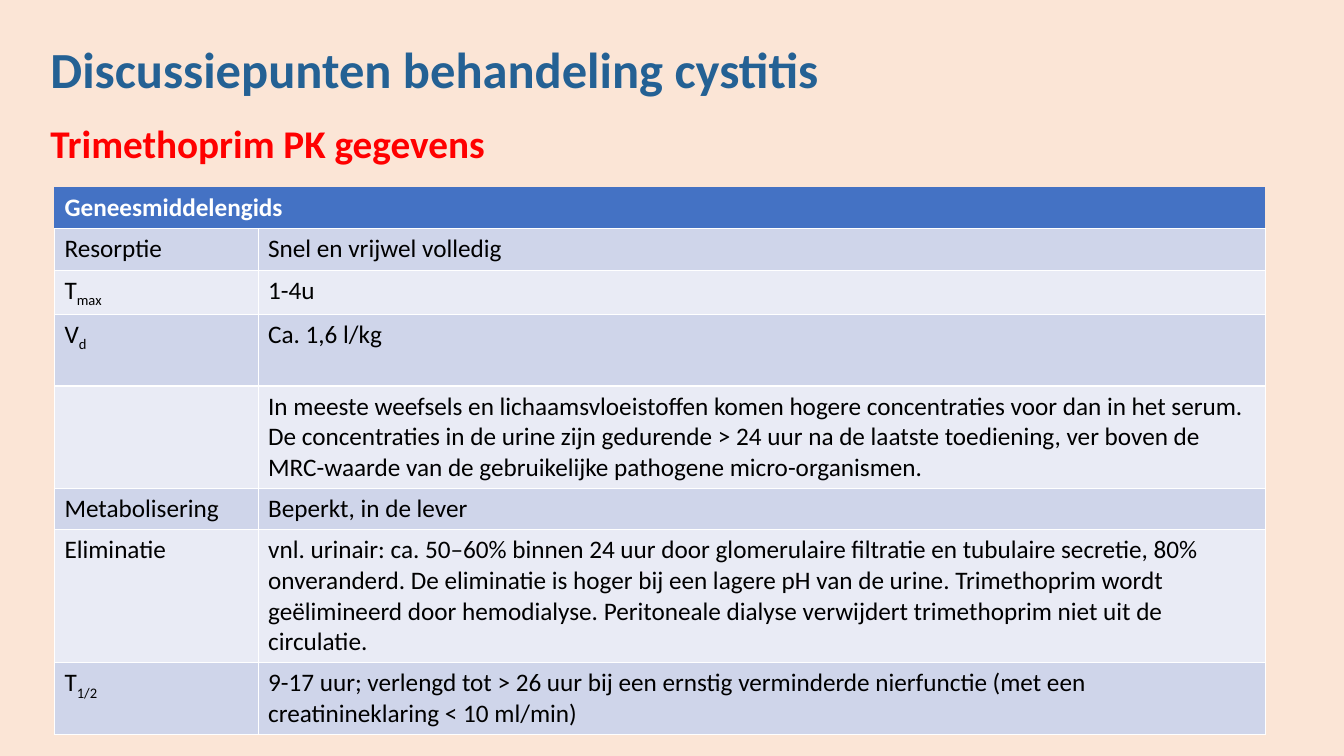
from lxml.etree import SubElement
from pptx import Presentation
from pptx.dml.color import RGBColor
from pptx.enum.text import MSO_ANCHOR, PP_ALIGN
from pptx.oxml.ns import qn
from pptx.util import Inches, Pt

PEACH = RGBColor(0xFB, 0xE5, 0xD6)
TITLE_BLUE = RGBColor(0x24, 0x61, 0x94)
RED = RGBColor(0xFF, 0x00, 0x00)
HEADER_BLUE = RGBColor(0x44, 0x72, 0xC4)
BANDS = (RGBColor(0xCF, 0xD5, 0xEA), RGBColor(0xE9, 0xEB, 0xF5))
WHITE = RGBColor(0xFF, 0xFF, 0xFF)
BLACK = RGBColor(0x00, 0x00, 0x00)

COLUMN_WIDTHS = (2.02, 9.99)
HEADER_HEIGHT = 0.41
TABLE_HEADER = "Geneesmiddelengids"
# Label, subscript of the label, value, row height in inches
PROPERTIES = [
    ("Resorptie", "", "Snel en vrijwel volledig", 0.41),
    ("T", "max", "1-4u", 0.44),
    ("V", "d", "Ca. 1,6 l/kg", 0.71),
    ("", "", "In meeste weefsels en lichaamsvloeistoffen komen hogere concentraties "
     "voor dan in het serum. De concentraties in de urine zijn gedurende > 24 uur na de "
     "laatste toediening, ver boven de MRC-waarde van de gebruikelijke pathogene "
     "micro-organismen.", 1.01),
    ("Metabolisering", "", "Beperkt, in de lever", 0.41),
    ("Eliminatie", "", "vnl. urinair: ca. 50–60% binnen 24 uur door glomerulaire "
     "filtratie en tubulaire secretie, 80% onveranderd. De eliminatie is hoger bij een "
     "lagere pH van de urine. Trimethoprim wordt geëlimineerd door hemodialyse. "
     "Peritoneale dialyse verwijdert trimethoprim niet uit de circulatie.", 1.32),
    ("T", "1/2", "9-17 uur; verlengd tot > 26 uur bij een ernstig verminderde "
     "nierfunctie (met een creatinineklaring < 10 ml/min)", 0.71),
]


def add_text(paragraph, text, size=18, color=BLACK, bold=False, subscript=False):
    run = paragraph.add_run()
    run.text = text
    run.font.name = "Calibri"
    run.font.size = Pt(size)
    run.font.bold = bold
    run.font.color.rgb = color
    if subscript:
        run._r.get_or_add_rPr().set("baseline", "-25000")


def fill_placeholder(shape, box, text, anchor, space_before=0, **text_format):
    shape.left, shape.top, shape.width, shape.height = map(Inches, box)
    shape.text_frame.vertical_anchor = anchor
    paragraph = shape.text_frame.paragraphs[0]
    paragraph.alignment = PP_ALIGN.LEFT
    paragraph.line_spacing = 0.9
    paragraph.space_before = Pt(space_before)
    # No bullet and no hanging indent
    properties = paragraph._p.get_or_add_pPr()
    properties.set("marL", "0")
    properties.set("indent", "0")
    SubElement(properties, qn("a:buNone"))
    add_text(paragraph, text, **text_format)


def format_cell(cell, fill, border=None):
    properties = cell._tc.get_or_add_tcPr()
    for side in ("lnL", "lnR", "lnT", "lnB"):
        line = SubElement(properties, qn(f"a:{side}"), w=str(Pt(1)))
        if border is None:
            SubElement(line, qn("a:noFill"))
        else:
            solid = SubElement(line, qn("a:solidFill"))
            SubElement(solid, qn("a:srgbClr"), val=str(border))
    cell.fill.solid()
    cell.fill.fore_color.rgb = fill


def add_property_table(slide, left, top):
    heights = [HEADER_HEIGHT] + [row[-1] for row in PROPERTIES]
    table = slide.shapes.add_table(
        len(heights), len(COLUMN_WIDTHS), Inches(left), Inches(top),
        Inches(sum(COLUMN_WIDTHS)), Inches(sum(heights))).table
    for column, width in zip(table.columns, COLUMN_WIDTHS):
        column.width = Inches(width)
    for row, height in zip(table.rows, heights):
        row.height = Inches(height)

    # Header across both columns
    header = table.cell(0, 0)
    header.merge(table.cell(0, 1))
    for cell in table.rows[0].cells:
        format_cell(cell, HEADER_BLUE)
    add_text(header.text_frame.paragraphs[0], TABLE_HEADER, color=WHITE, bold=True)

    # Banded rows
    for index, (label, subscript, value, _) in enumerate(PROPERTIES):
        label_cell, value_cell = table.rows[index + 1].cells
        for cell in (label_cell, value_cell):
            format_cell(cell, BANDS[index % 2], border=WHITE)
        label_paragraph = label_cell.text_frame.paragraphs[0]
        if label:
            add_text(label_paragraph, label)
        if subscript:
            add_text(label_paragraph, subscript, subscript=True)
        add_text(value_cell.text_frame.paragraphs[0], value)


def build_slide(presentation):
    slide = presentation.slides.add_slide(presentation.slide_layouts[1])
    slide.background.fill.solid()
    slide.background.fill.fore_color.rgb = PEACH
    fill_placeholder(slide.shapes.title, (0.4, 0.31, 12.4, 0.73),
                     "Discussiepunten behandeling cystitis", MSO_ANCHOR.BOTTOM,
                     size=36.1, color=TITLE_BLUE, bold=True)
    fill_placeholder(slide.placeholders[1], (0.4, 1.19, 12.29, 5.63),
                     "Trimethoprim PK gegevens", MSO_ANCHOR.TOP, space_before=10,
                     size=28, color=RED, bold=True)
    add_property_table(slide, 0.54, 1.86)


def main():
    presentation = Presentation()
    presentation.slide_width = Inches(13.33)
    presentation.slide_height = Inches(7.5)
    build_slide(presentation)
    presentation.save("out.pptx")


if __name__ == "__main__":
    main()
